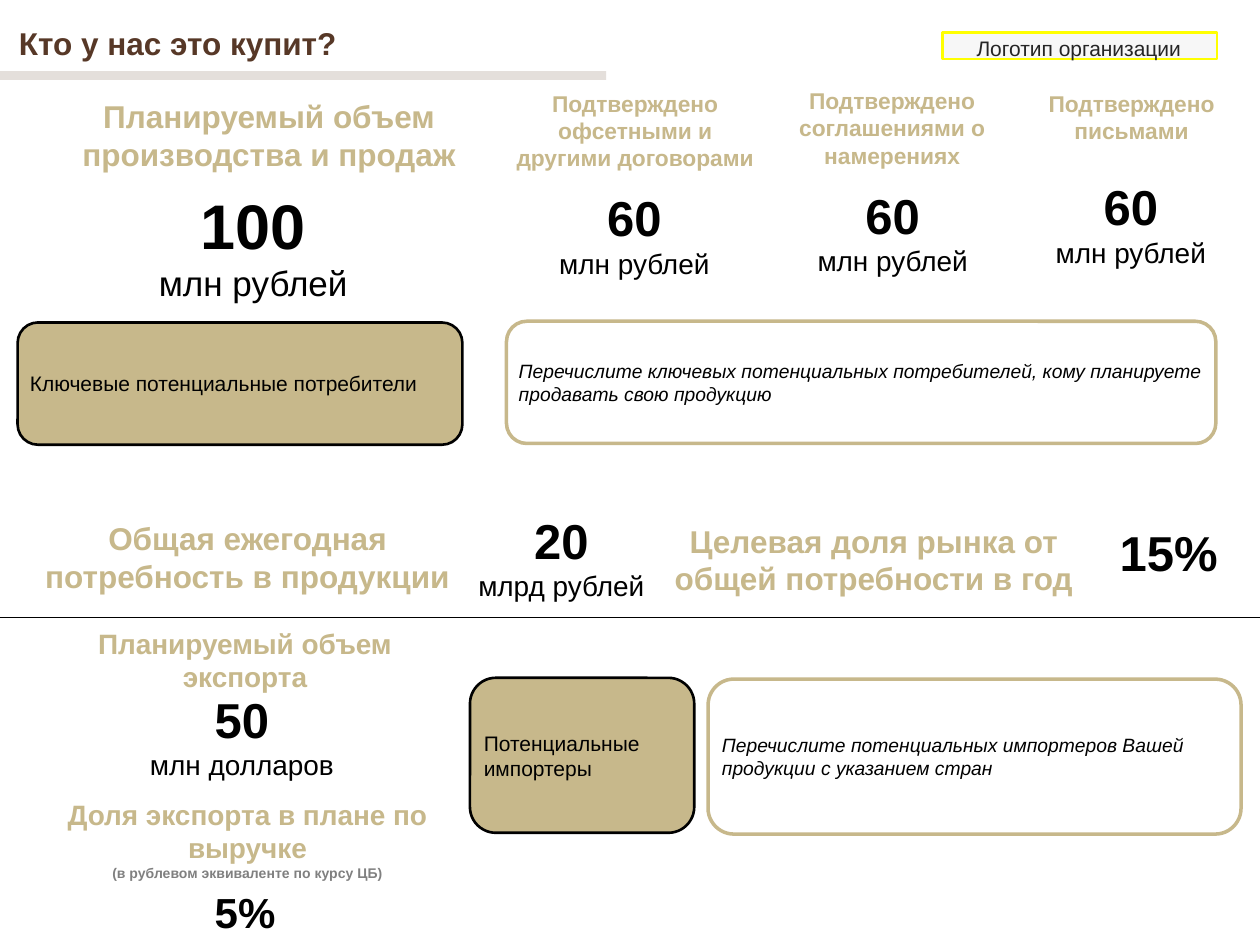
from lxml import etree
from pptx import Presentation
from pptx.dml.color import RGBColor
from pptx.enum.shapes import MSO_CONNECTOR, MSO_SHAPE
from pptx.enum.text import MSO_ANCHOR, MSO_AUTO_SIZE, PP_ALIGN
from pptx.oxml.ns import qn
from pptx.util import Inches, Pt

LEFT, CENTER = PP_ALIGN.LEFT, PP_ALIGN.CENTER
TOP, MIDDLE = MSO_ANCHOR.TOP, MSO_ANCHOR.MIDDLE
NO_FIT = MSO_AUTO_SIZE.NONE
RECT, ROUNDED = MSO_SHAPE.RECTANGLE, MSO_SHAPE.ROUNDED_RECTANGLE
STRAIGHT = MSO_CONNECTOR.STRAIGHT
TITLE_ONLY = 5

FONT = "Arial"
SAND, BROWN, BLACK, WHITE = "C7B88B", "573827", "000000", "FFFFFF"
PALE, YELLOW, INK, TAUPE, GREY = "F1F1F1", "FFFF00", "252525", "A8998C", "808080"


def rgb(value):
    return RGBColor.from_string(value)


def set_opacity(properties, percent):
    color = next(properties.iter(qn("a:srgbClr")))
    etree.SubElement(color, qn("a:alpha")).set("val", str(percent * 1000))


class MarketSlide:
    def __init__(self, slide):
        self.slide = slide

    def style(self, font, size, color, bold=False, italic=False):
        font.name = FONT
        font.size = Pt(size)
        font.color.rgb = rgb(color)
        font.bold = bold
        font.italic = italic

    def frame(self, shape, anchor=TOP, wrap=True):
        frame = shape.text_frame
        frame.auto_size = NO_FIT
        frame.word_wrap = wrap
        frame.vertical_anchor = anchor
        frame.margin_left = frame.margin_right = Inches(0.05)
        frame.margin_top = frame.margin_bottom = Inches(0.05)
        return frame

    def title(self, text, left, top, width, height):
        title = self.slide.shapes.title
        title.left, title.top = Inches(left), Inches(top)
        title.width, title.height = Inches(width), Inches(height)
        paragraph = self.frame(title, wrap=False).paragraphs[0]
        paragraph.text = text
        paragraph.alignment = LEFT
        self.style(paragraph.font, 18, BROWN, bold=True)

    def text_box(self, left, top, width, height, wrap):
        box = self.slide.shapes.add_textbox(
            Inches(left), Inches(top), Inches(width), Inches(height))
        return self.frame(box, wrap=wrap)

    def heading(self, text, size, left, top, width, height, note=None):
        paragraph = self.text_box(left, top, width, height, True).paragraphs[0]
        paragraph.text = text
        paragraph.alignment = CENTER
        self.style(paragraph.font, size, SAND, bold=True)
        if note:
            paragraph.add_line_break()
            remark = paragraph.add_run()
            remark.text = note
            self.style(remark.font, 8, GREY, bold=True)

    def figure(self, number, size, left, top, width, height, unit=None, unit_size=16):
        frame = self.text_box(left, top, width, height, False)
        value = frame.paragraphs[0]
        value.text = number
        value.alignment = CENTER
        self.style(value.font, size, BLACK, bold=True)
        if unit:
            measure = frame.add_paragraph()
            measure.text = unit
            measure.alignment = CENTER
            self.style(measure.font, unit_size, BLACK)

    def panel(self, text, left, top, width, height, fill, line, line_width,
              size, color=BLACK, italic=False, geometry=ROUNDED):
        panel = self.slide.shapes.add_shape(
            geometry, Inches(left), Inches(top), Inches(width), Inches(height))
        panel.shadow.inherit = False
        panel.fill.solid()
        panel.fill.fore_color.rgb = rgb(fill)
        panel.line.color.rgb = rgb(line)
        panel.line.width = Pt(line_width)
        paragraph = self.frame(panel, MIDDLE).paragraphs[0]
        paragraph.text = text
        paragraph.alignment = LEFT
        self.style(paragraph.font, size, color, italic=italic)
        return panel

    def logo_slot(self, text, left, top, width, height):
        slot = self.panel(text, left, top, width, height, PALE, YELLOW, 1.56,
                          12, INK, geometry=RECT)
        set_opacity(slot.fill._xPr.find(qn("a:solidFill")), 52)
        frame = slot.text_frame
        frame.vertical_anchor = TOP
        frame.margin_left, frame.margin_top = Inches(0.27), Inches(0.02)
        frame.margin_right = frame.margin_bottom = 0

    def topic(self, text, left, top, width, height):
        self.panel(text, left, top, width, height, SAND, BLACK, 1.5, 12)

    def hint(self, text, left, top, width, height):
        self.panel(text, left, top, width, height, WHITE, SAND, 2, 11, italic=True)

    def rule(self, top, right, color, width, opacity=100):
        rule = self.slide.shapes.add_connector(
            STRAIGHT, 0, Inches(top), Inches(right), Inches(top))
        rule.line.color.rgb = rgb(color)
        rule.line.width = Pt(width)
        properties = rule._element.spPr
        if opacity < 100:
            set_opacity(properties, opacity)
        etree.SubElement(properties, qn("a:effectLst"))


def main():
    deck = Presentation()
    deck.slide_width, deck.slide_height = Inches(10), Inches(7.5)
    market = MarketSlide(deck.slides.add_slide(deck.slide_layouts[TITLE_ONLY]))

    market.logo_slot("Логотип организации", 7.48, 0.26, 2.18, 0.21)
    market.title("Кто у нас это купит?", 0.1, 0.14, 2.66, 0.4)
    market.rule(0.6, 4.81, TAUPE, 5, opacity=31)

    market.heading("Планируемый объем производства и продаж", 18, 0.45, 0.72, 3.37, 0.71)
    market.figure("100", 36, 1.2, 1.43, 1.62, 1.04, "млн рублей", 20)
    confirmations = [
        ("Подтверждено офсетными и другими договорами", 4.02, 0.66, 4.38, 1.44),
        ("Подтверждено соглашениями о намерениях", 6.06, 0.64, 6.43, 1.42),
        ("Подтверждено письмами", 7.96, 0.66, 8.32, 1.35),
    ]
    for proof, proof_left, proof_top, sum_left, sum_top in confirmations:
        market.heading(proof, 13, proof_left, proof_top, 2.04, 0.76)
        market.figure("60", 28, sum_left, sum_top, 1.31, 0.84, "млн рублей")

    market.topic("Ключевые потенциальные потребители", 0.14, 2.56, 3.53, 0.97)
    market.hint("Перечислите ключевых потенциальных потребителей, кому планируете "
                "продавать свою продукцию", 4.02, 2.55, 5.63, 0.97)

    market.heading("Общая ежегодная потребность в продукции", 18, 0.28, 4.07, 3.37, 0.71)
    market.figure("20", 28, 3.73, 4, 1.45, 0.84, "млрд рублей")
    market.heading("Целевая доля рынка от общей потребности в год", 18,
                   5.25, 4.09, 3.37, 0.71)
    market.figure("15%", 28, 8.83, 4.1, 0.89, 0.57)
    market.rule(4.9, 10, BLACK, 0.75)

    market.heading("Планируемый объем экспорта", 16, 0.26, 4.92, 3.37, 0.64)
    market.figure("50", 28, 1.13, 5.42, 1.58, 0.84, "млн долларов")
    market.topic("Потенциальные импортеры", 3.73, 5.38, 1.78, 1.23)
    market.hint("Перечислите потенциальных импортеров Вашей продукции с указанием стран",
                5.62, 5.39, 4.23, 1.23)
    market.heading("Доля экспорта в плане по выручке", 16, 0.28, 6.28, 3.37, 0.77,
                   note="(в рублевом эквиваленте по курсу ЦБ)")
    market.figure("5%", 24, 1.65, 6.99, 0.59, 0.5)

    deck.save("out.pptx")


if __name__ == "__main__":
    main()
